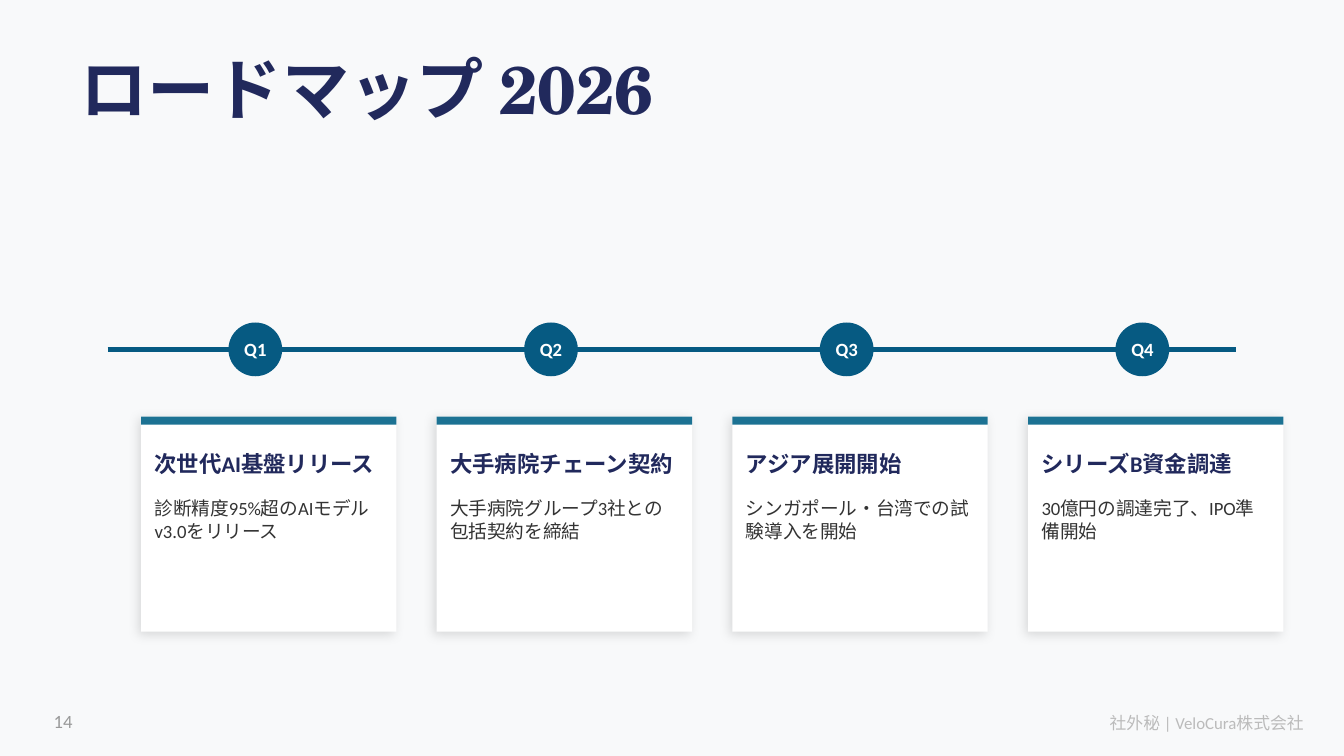
from pptx import Presentation
from pptx.dml.color import RGBColor as Rgb
from pptx.enum.shapes import MSO_CONNECTOR as Conn, MSO_SHAPE as Kind
from pptx.enum.text import MSO_ANCHOR as Anchor, PP_ALIGN as Align
from pptx.oxml import parse_xml
from pptx.oxml.ns import nsdecls
from pptx.util import Inches, Pt

# Content
TITLE = "ロードマップ 2026"
STEPS = [
    ("Q1", "次世代AI基盤リリース", "診断精度95%超のAIモデルv3.0をリリース"),
    ("Q2", "大手病院チェーン契約", "大手病院グループ3社との包括契約を締結"),
    ("Q3", "アジア展開開始", "シンガポール・台湾での試験導入を開始"),
    ("Q4", "シリーズB資金調達", "30億円の調達完了、IPO準備開始"),
]
PAGE = "14"
NOTE = "社外秘 | VeloCura株式会社"

# Theme: colours and type styles
THEME = {
    "back": "F8F9FA", "line": "065A82", "band": "1C7293", "card": "FFFFFF",
    "title": dict(name="TeX Gyre Schola", size=36, color="21295C", bold=True),
    "mark": dict(name="Calibri", size=10, color="FFFFFF", bold=True),
    "head": dict(name="Calibri", size=12, color="21295C", bold=True),
    "body": dict(name="Calibri", size=10, color="333333", bold=False),
    "page": dict(name="Calibri", size=10, color="999999", bold=False),
    "note": dict(name="Calibri", size=9, color="BBBBBB", bold=False),
}

# Layout rules, in inches
FIRST, STEP = 1.9, 2.2      # centre of the first quarter, gap to the next
AXIS, DOT = 2.6, 0.4        # height of the time line, size of a marker
TOP, WIDE, TALL, BAND, PAD = 3.1, 1.9, 1.6, 0.06, 0.1
CARD = 0.1                  # cards sit this far right of their marker

EFFECT = "<a:effectLst %s>%s</a:effectLst>"
SHADE = ('<a:outerShdw blurRad="%d" dist="%d" dir="8100000" algn="bl" rotWithShape="0">'
         '<a:srgbClr val="000000"><a:alpha val="12000"/></a:srgbClr></a:outerShdw>'
         % (Pt(6), Pt(2)))


def add_effect(item, inner=""):
    item._element.spPr.append(parse_xml(EFFECT % (nsdecls("a"), inner)))


def add_text(slide, box, text, style, anchor=Anchor.MIDDLE, align=Align.LEFT):
    frame = slide.shapes.add_textbox(*map(Inches, box)).text_frame
    form = dict(word_wrap=True, vertical_anchor=anchor, margin_left=0,
                margin_right=0, margin_top=0, margin_bottom=0)
    for key, val in form.items():
        setattr(frame, key, val)
    para = frame.paragraphs[0]
    para.alignment = align
    run = para.add_run()
    run.text = text
    look = dict(THEME[style])
    run.font.color.rgb = Rgb.from_string(look.pop("color"))
    look["size"] = Pt(look["size"])
    for key, val in look.items():
        setattr(run.font, key, val)


def add_block(slide, kind, box, fill):
    item = slide.shapes.add_shape(kind, *map(Inches, box))
    item.fill.solid()
    item.fill.fore_color.rgb = Rgb.from_string(THEME[fill])
    item.line.fill.background()
    item.shadow.inherit = fill == "card"
    return item


def add_step(slide, mid, step):
    mark, head, body = step
    # Marker on the time line
    spot = (mid - DOT / 2, AXIS - DOT / 2, DOT, DOT)
    add_block(slide, Kind.OVAL, spot, "line")
    add_text(slide, spot, mark, "mark", align=Align.CENTER)
    # Card with its top band
    left = mid + CARD - WIDE / 2
    card = add_block(slide, Kind.RECTANGLE, (left, TOP, WIDE, TALL), "card")
    add_effect(card, SHADE)
    add_block(slide, Kind.RECTANGLE, (left, TOP, WIDE, BAND), "band")
    # Card text
    inner = WIDE - 2 * PAD
    add_text(slide, (left + PAD, TOP + PAD, inner, 0.5), head, "head")
    add_text(slide, (left + PAD, TOP + PAD + 0.5, inner, 0.7), body, "body",
             anchor=Anchor.TOP)


def main():
    deck = Presentation()
    deck.slide_width = Inches(10)
    deck.slide_height = deck.slide_width * 9 // 16
    slide = deck.slides.add_slide(deck.slide_layouts[6])
    fill = slide.background.fill
    fill.solid()
    fill.fore_color.rgb = Rgb.from_string(THEME["back"])

    add_text(slide, (0.6, 0.3, 9, 0.7), TITLE, "title")

    # Time line
    ends = map(Inches, (0.8, AXIS, 9.2, AXIS))
    axis = slide.shapes.add_connector(Conn.STRAIGHT, *ends)
    axis.line.color.rgb = Rgb.from_string(THEME["line"])
    axis.line.width = Pt(3)
    add_effect(axis)

    for i, step in enumerate(STEPS):
        add_step(slide, FIRST + i * STEP, step)

    # Footer
    add_text(slide, (0.4, 5.15, 0.5, 0.3), PAGE, "page", anchor=Anchor.BOTTOM)
    add_text(slide, (7, 5.15, 2.7, 0.3), NOTE, "note", anchor=Anchor.BOTTOM,
             align=Align.RIGHT)
    deck.save("out.pptx")


if __name__ == "__main__":
    main()
